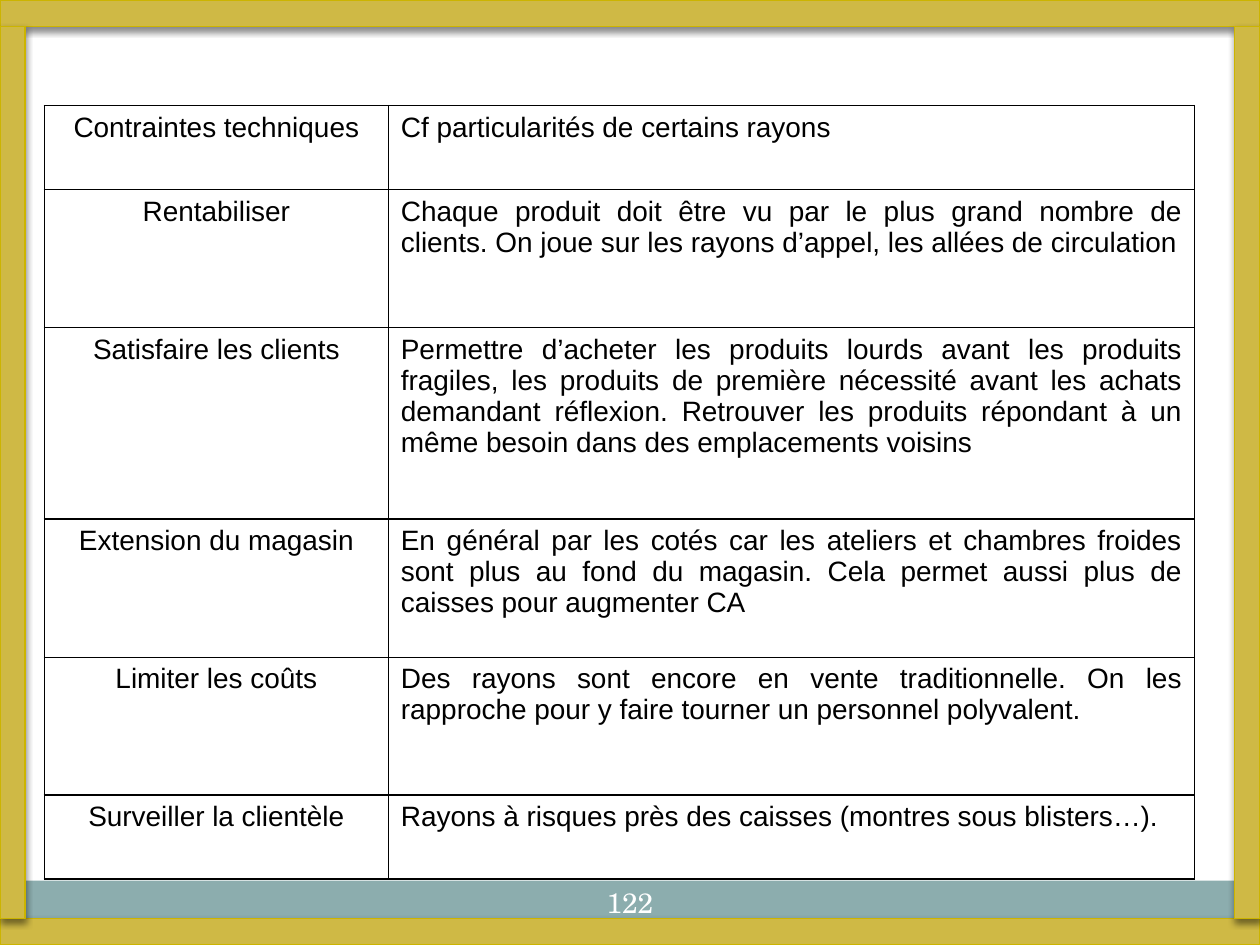
from lxml.etree import SubElement
from pptx import Presentation
from pptx.dml.color import RGBColor
from pptx.enum.shapes import MSO_SHAPE as Shape
from pptx.enum.text import MSO_ANCHOR as Anchor, PP_ALIGN as Align
from pptx.oxml.ns import qn
from pptx.util import Pt

# Content
ROWS = [
    ("Contraintes techniques", "Cf particularités de certains rayons"),
    ("Rentabiliser",
     "Chaque produit doit être vu par le plus grand nombre de clients. "
     "On joue sur les rayons d’appel, les allées de circulation"),
    ("Satisfaire les clients",
     "Permettre d’acheter les produits lourds avant les produits fragiles, "
     "les produits de première nécessité avant les achats demandant réflexion. "
     "Retrouver les produits répondant à un même besoin dans des emplacements voisins"),
    ("Extension du magasin",
     "En général par les cotés car les ateliers et chambres froides sont plus "
     "au fond du magasin. Cela permet aussi plus de caisses pour augmenter CA"),
    ("Limiter les coûts",
     "Des rayons sont encore en vente traditionnelle. "
     "On les rapproche pour y faire tourner un personnel polyvalent."),
    ("Surveiller la clientèle",
     "Rayons à risques près des caisses (montres sous blisters…)."),
]
PAGE_NUMBER = "122"

THEME = dict(gold="CFB945", gold_line="CCB400", band="8CADAE", ink="000000",
             white="FFFFFF", body="Arial", serif="TeX Gyre Schola", size=16)

# Layout, in points
W, H = 720, 540
COL_WIDTHS = [196.5, 460.8]
ROW_HEIGHTS = [48, 78.75, 109.5, 79, 78.75, 48]
TABLE_LEFT, TABLE_TOP = 25.4, 60.4
BAR, SIDE = 15, 14.4
SIDE_H = H - 2 * BAR


def rgb(name):
    return RGBColor.from_string(THEME[name])


def write(tf, text, font="body", color="ink", align=Align.CENTER):
    p = tf.paragraphs[0]
    p.alignment = align
    r = p.add_run()
    r.text = text
    r.font.name = THEME[font]
    r.font.size = Pt(THEME["size"])
    r.font.color.rgb = rgb(color)


def add_rect(s, box, fill, line=None):
    sp = s.shapes.add_shape(Shape.RECTANGLE, *map(Pt, box))
    sp.shadow.inherit = False
    sp.fill.solid()
    sp.fill.fore_color.rgb = rgb(fill)
    if line:
        sp.line.color.rgb = rgb(line)
        sp.line.width = Pt(0.75)
    else:
        sp.line.fill.background()
    return sp


def add_shadow(sp):
    effects = sp.element.spPr.find(qn("a:effectLst"))
    shadow = SubElement(effects, qn("a:outerShdw"), blurRad=str(Pt(4)),
                        dist=str(Pt(2)), dir="5400000", rotWithShape="0")
    color = SubElement(shadow, qn("a:srgbClr"), val=THEME["ink"])
    SubElement(color, qn("a:alpha"), val="45000")


def add_borders(cell):
    tc_pr = cell._tc.get_or_add_tcPr()
    for i, side in enumerate(("lnL", "lnR", "lnT", "lnB")):
        ln = tc_pr.makeelement(qn(f"a:{side}"), {"w": str(Pt(1))})
        fill = SubElement(ln, qn("a:solidFill"))
        SubElement(fill, qn("a:srgbClr"), val=THEME["ink"])
        tc_pr.insert(i, ln)


def add_table(s):
    frame = s.shapes.add_table(len(ROWS), len(COL_WIDTHS), Pt(TABLE_LEFT), Pt(TABLE_TOP),
                               Pt(sum(COL_WIDTHS)), Pt(sum(ROW_HEIGHTS)))
    table = frame.table
    table.first_row = table.horz_banding = False
    for col, width in zip(table.columns, COL_WIDTHS):
        col.width = Pt(width)
    for row, height, texts in zip(table.rows, ROW_HEIGHTS, ROWS):
        row.height = Pt(height)
        for cell, text, align in zip(row.cells, texts, (Align.CENTER, Align.JUSTIFY)):
            cell.fill.background()
            write(cell.text_frame, text, align=align)
            add_borders(cell)


def main():
    prs = Presentation()
    prs.slide_width, prs.slide_height = Pt(W), Pt(H)
    s = prs.slides.add_slide(prs.slide_layouts[6])

    # Footer band and page number
    add_rect(s, (11.5, 503.3, 695.5, 24.5), "band")
    number = s.shapes.add_textbox(Pt(336), Pt(498.5), Pt(48), Pt(34.5))
    tf = number.text_frame
    tf.word_wrap = True
    tf.vertical_anchor = Anchor.MIDDLE
    tf.margin_left = tf.margin_right = tf.margin_top = tf.margin_bottom = Pt(3.6)
    write(tf, PAGE_NUMBER, font="serif", color="white")

    add_table(s)

    # Golden frame: top, bottom, left, right
    for box in [(0, 0, W, BAR), (0, H - BAR, W, BAR),
                (0, BAR, SIDE, SIDE_H), (W - SIDE, BAR, SIDE, SIDE_H)]:
        add_shadow(add_rect(s, box, "gold", "gold_line"))

    prs.save("out.pptx")


if __name__ == "__main__":
    main()
